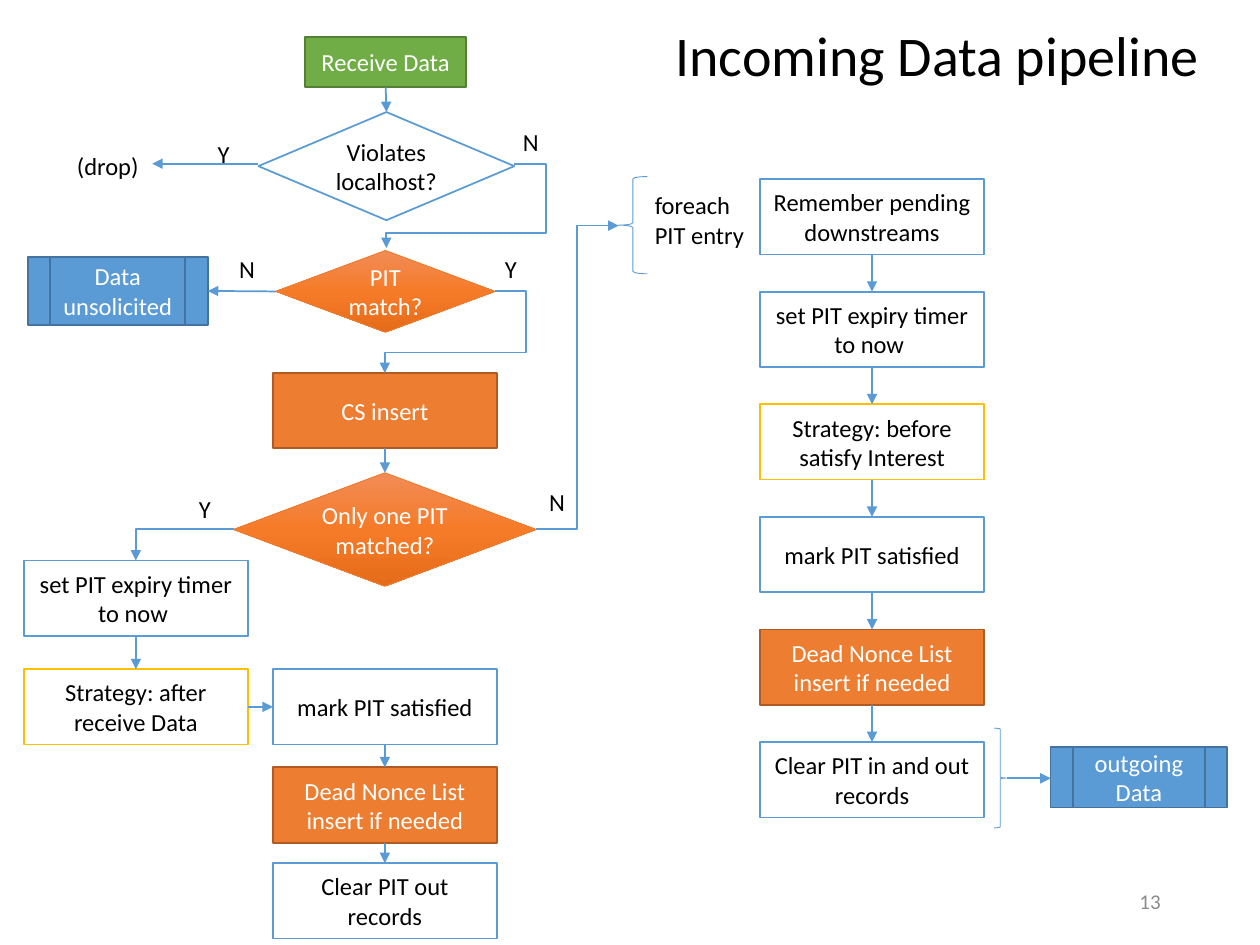
from copy import deepcopy
from dataclasses import dataclass

from lxml import etree
from pptx import Presentation
from pptx.dml.color import RGBColor
from pptx.enum.shapes import MSO_CONNECTOR, MSO_SHAPE
from pptx.enum.text import MSO_ANCHOR, PP_ALIGN
from pptx.oxml.ns import qn
from pptx.util import Cm, Pt

RECT, DIAMOND = MSO_SHAPE.RECTANGLE, MSO_SHAPE.DIAMOND
CALL = MSO_SHAPE.FLOWCHART_PREDEFINED_PROCESS
LEFT_BRACE, RIGHT_BRACE = MSO_SHAPE.LEFT_BRACE, MSO_SHAPE.RIGHT_BRACE
STRAIGHT, ELBOW = MSO_CONNECTOR.STRAIGHT, MSO_CONNECTOR.ELBOW
LEFT, CENTER, RIGHT = PP_ALIGN.LEFT, PP_ALIGN.CENTER, PP_ALIGN.RIGHT
MIDDLE, TOP = MSO_ANCHOR.MIDDLE, MSO_ANCHOR.TOP

WHITE = RGBColor(0xFF, 0xFF, 0xFF)
BLACK = RGBColor(0x00, 0x00, 0x00)
GRAY = RGBColor(0x8C, 0x8C, 0x8C)
BLUE = RGBColor(0x5B, 0x9B, 0xD5)
NAVY = RGBColor(0x43, 0x73, 0x9E)
GREEN = RGBColor(0x70, 0xAD, 0x47)
MOSS = RGBColor(0x53, 0x80, 0x35)
ORANGE = RGBColor(0xED, 0x7D, 0x31)
RUST = RGBColor(0xAF, 0x5C, 0x24)
GOLD = RGBColor(0xFF, 0xC0, 0x00)
GLOW = ((0, RGBColor(0xF1, 0x8C, 0x57)), (0.5, RGBColor(0xF6, 0x7B, 0x28)),
        (1, RGBColor(0xE5, 0x6C, 0x19)))


@dataclass(frozen=True)
class Style:
    fill: RGBColor | None  # None stands for the orange gradient
    line: RGBColor
    ink: RGBColor
    width: float = 1


PLAIN = Style(WHITE, BLUE, BLACK)
STRATEGY = Style(WHITE, GOLD, BLACK)
TABLE = Style(ORANGE, RUST, WHITE)
START = Style(GREEN, MOSS, WHITE)
PIPE = Style(BLUE, NAVY, WHITE)
LOOKUP = Style(None, ORANGE, WHITE, 0.5)


@dataclass(frozen=True)
class Node:
    """A flow chart step, placed in centimetres."""
    text: str
    left: float
    top: float
    style: Style = PLAIN
    width: float = 4.52
    height: float = 1.52
    form: MSO_SHAPE = RECT


@dataclass(frozen=True)
class Label:
    text: str
    left: float
    top: float
    width: float = 0.84
    height: float = 0.86


@dataclass(frozen=True)
class Bend:
    """An elbow arrow; turns are fractions of its width and height."""
    form: str
    start: tuple[float, float]
    end: tuple[float, float]
    turns: tuple[float, ...] = ()


MAIN, SIDE, LOOP = 5.5, 0.48, 15.32
LOOP_TOP, LOOP_STEP = 3.61, 2.27

NODES = {
    "receive": Node("Receive Data", 6.15, 0.74, START, 3.25, 1.02),
    "local": Node("Violates localhost?", 5.21, 2.26, PLAIN, 5.16, 2.18, DIAMOND),
    "match": Node("PIT match?", 5.56, 5.05, LOOKUP, 4.42, 1.65, DIAMOND),
    "stray": Node("Data unsolicited", 0.56, 5.18, PIPE, 3.63, 1.37, CALL),
    "store": Node("CS insert", MAIN, 7.52, TABLE),
    "single": Node("Only one PIT matched?", 4.71, 9.53, LOOKUP, 6.1, 2.29, DIAMOND),
    "timer": Node("set PIT expiry timer to now ", SIDE, 11.3),
    "after": Node("Strategy: after receive Data", SIDE, 13.49, STRATEGY),
    "mark": Node("mark PIT satisfied", MAIN, 13.49),
    "nonce": Node("Dead Nonce List insert if needed", MAIN, 15.47, TABLE),
    "clear": Node("Clear PIT out records", MAIN, 17.4),
    "out": Node("outgoing Data", 21.18, 15.06, PIPE, 3.56, 1.22, CALL),
}
LOOP_STEPS = (
    ("Remember pending downstreams", PLAIN),
    ("set PIT expiry timer to now ", PLAIN),
    ("Strategy: before satisfy Interest", STRATEGY),
    ("mark PIT satisfied", PLAIN),
    ("Dead Nonce List insert if needed", TABLE),
    ("Clear PIT in and out records", PLAIN),
)
CHAINS = (("receive", "local"), ("store", "single"), ("timer", "after"),
          ("mark", "nonce", "clear"))
LABELS = (
    Label("(drop)", 1.3, 2.92, 1.78),
    Label("Y", 4.14, 2.67), Label("N", 10.29, 2.44),
    Label("N", 4.57, 5), Label("Y", 9.93, 5),
    Label("Y", 3.76, 9.83), Label("N", 10.82, 9.7),
    Label("foreach\nPIT entry", 12.95, 3.71, 2.34, 1.45),
)
BENDS = (
    Bend("bentConnector4", (10.37, 3.3), (7.79, 5), (-0.25, 0.82)),
    Bend("bentConnector4", (9.98, 5.87), (7.76, 7.52), (-0.28, 0.75)),
    Bend("bentConnector2", (4.71, 10.67), (2.74, 11.3)),
    Bend("bentConnector3", (10.81, 10.67), (12.47, 4.55), (0.5,)),
)
BRACES = ((LEFT_BRACE, 12.47, 3.56, 0.58, 1.96),
          (RIGHT_BRACE, 20.04, 14.68, 0.25, 2.01))


def write(frame, text: str, ink: RGBColor = BLACK, size: float = 14,
          align=LEFT, anchor=TOP) -> None:
    frame.text = text
    frame.vertical_anchor = anchor
    for para in frame.paragraphs:
        para.alignment = align
        para.font.name = "Calibri"
        para.font.size = Pt(size)
        para.font.color.rgb = ink


def glow(shape) -> None:
    """Fill with the three-stop gradient, top to bottom."""
    fill = shape.fill
    fill.gradient()
    stops = shape._element.spPr.find(qn("a:gradFill")).find(qn("a:gsLst"))
    stops.append(deepcopy(stops[-1]))
    fill.gradient_angle = 270
    for stop, (place, color) in zip(fill.gradient_stops, GLOW):
        stop.position = place
        stop.color.rgb = color


def add_node(slide, node: Node):
    shape = slide.shapes.add_shape(node.form, Cm(node.left), Cm(node.top),
                                   Cm(node.width), Cm(node.height))
    style = node.style
    shape.shadow.inherit = False
    if style.fill is None:
        glow(shape)
    else:
        shape.fill.solid()
        shape.fill.fore_color.rgb = style.fill
    shape.line.color.rgb = style.line
    shape.line.width = Pt(style.width)
    write(shape.text_frame, node.text, style.ink, align=CENTER, anchor=MIDDLE)
    return shape


def add_label(slide, label: Label) -> None:
    box = slide.shapes.add_textbox(Cm(label.left), Cm(label.top),
                                   Cm(label.width), Cm(label.height))
    box.text_frame.word_wrap = False
    write(box.text_frame, label.text)


def add_arrow(slide, start=(0, 0), end=(0, 0), kind=STRAIGHT):
    line = slide.shapes.add_connector(kind, *map(Cm, start + end))
    line.line.color.rgb = BLUE
    line.line.width = Pt(1)
    etree.SubElement(line.line._get_or_add_ln(), qn("a:tailEnd"), type="triangle")
    etree.SubElement(line._element.spPr, qn("a:effectLst"))
    return line


def join(slide, first, last, sites: tuple[int, int] = (2, 0)) -> None:
    """Glue an arrow to two steps; sites run top, left, bottom, right."""
    line = add_arrow(slide)
    line.begin_connect(first, sites[0])
    line.end_connect(last, sites[1])


def add_bend(slide, bend: Bend) -> None:
    line = add_arrow(slide, bend.start, bend.end, ELBOW)
    geom = line._element.spPr.find(qn("a:prstGeom"))
    geom.set("prst", bend.form)
    guides = geom.find(qn("a:avLst"))
    for num, turn in enumerate(bend.turns, 1):
        etree.SubElement(guides, qn("a:gd"), name=f"adj{num}",
                         fmla=f"val {round(turn * 100000)}")


def add_brace(slide, form, *place: float) -> None:
    brace = slide.shapes.add_shape(form, *map(Cm, place))
    brace.shadow.inherit = False
    brace.fill.background()
    brace.line.color.rgb = BLUE
    brace.line.width = Pt(0.5)


def main() -> None:
    deck = Presentation()
    deck.slide_width, deck.slide_height = Cm(25.4), Cm(19.05)
    slide = deck.slides.add_slide(deck.slide_layouts[5])
    title = slide.shapes.title
    title.left, title.top, title.width, title.height = map(Cm, (13.36, 0, 11.58, 2.34))
    write(title.text_frame, "Incoming Data pipeline", size=32, anchor=MIDDLE)
    title.text_frame.paragraphs[0].line_spacing = 0.9

    steps = {key: add_node(slide, node) for key, node in NODES.items()}
    loop = [add_node(slide, Node(text, LOOP, LOOP_TOP + row * LOOP_STEP, style))
            for row, (text, style) in enumerate(LOOP_STEPS)]
    for chain in [[steps[key] for key in keys] for keys in CHAINS] + [loop]:
        for first, last in zip(chain, chain[1:]):
            join(slide, first, last)
    join(slide, steps["match"], steps["stray"], (1, 3))
    join(slide, steps["after"], steps["mark"], (3, 1))
    add_arrow(slide, (5.21, 3.3), (3.07, 3.3))
    add_arrow(slide, (20.29, 15.69), (21.18, 15.69))

    for bend in BENDS:
        add_bend(slide, bend)
    for brace in BRACES:
        add_brace(slide, *brace)
    for label in LABELS:
        add_label(slide, label)
    number = slide.shapes.add_textbox(Cm(17.93), Cm(17.65), Cm(5.72), Cm(1.02))
    write(number.text_frame, "13", GRAY, 12, RIGHT, MIDDLE)
    deck.save("out.pptx")


if __name__ == "__main__":
    main()
